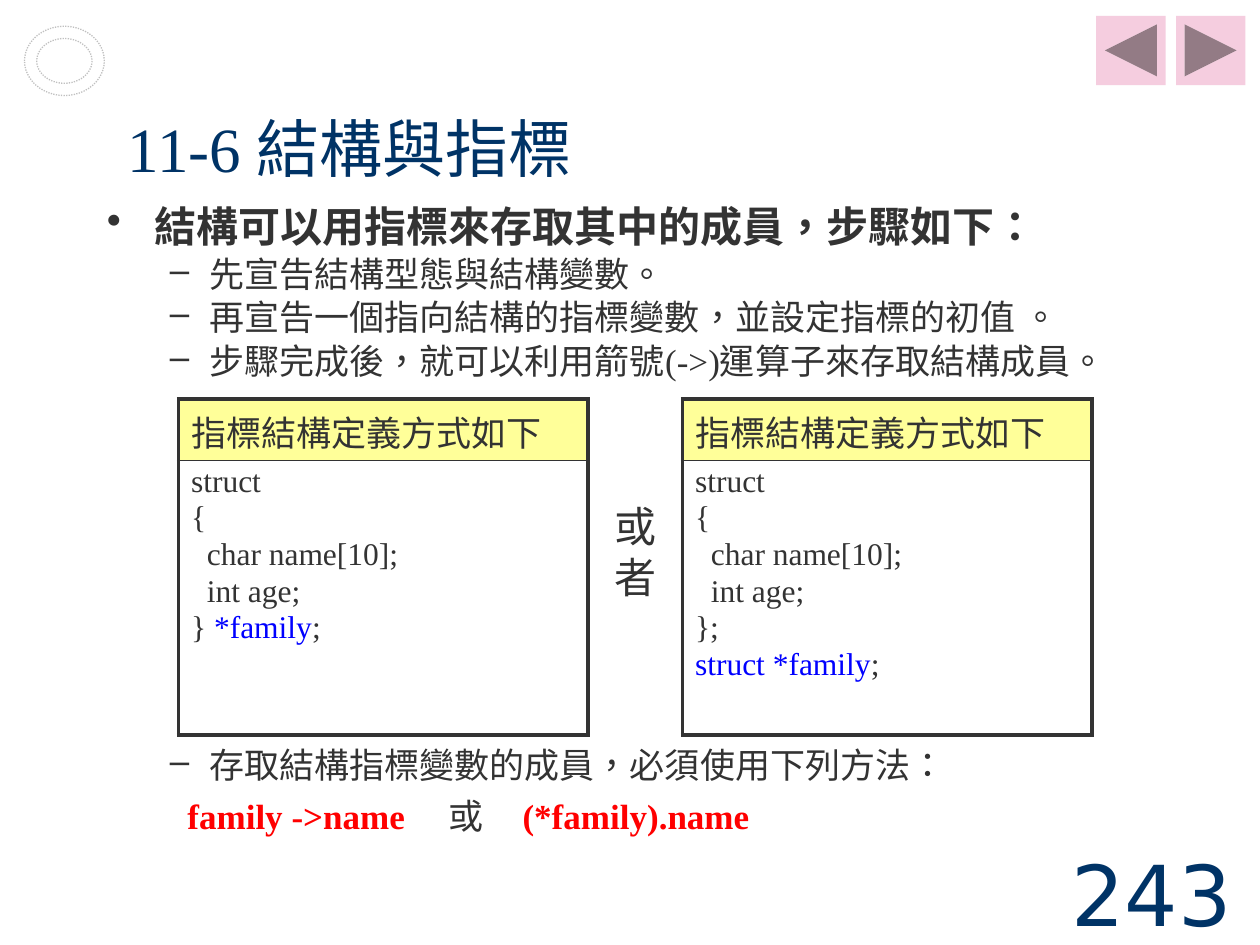
import pptx
import pptx.util
import pptx.dml.color
import pptx.enum.dml
import pptx.enum.lang
import pptx.enum.shapes
import pptx.enum.text
import pptx.oxml.ns
from lxml import etree

Pt = pptx.util.Pt
Shape = pptx.enum.shapes.MSO_SHAPE
Align = pptx.enum.text.PP_ALIGN
Anchor = pptx.enum.text.MSO_ANCHOR
NAVY, INK, RED, BLUE = "003366", "333333", "FF0000", "0000FF"
PINK, YELLOW, WHITE, GRAY = "F5CDDF", "FFFF99", "FFFFFF", "C0C0C0"


def rgb(code):
    return pptx.dml.color.RGBColor.from_string(code)


def node(parent, tag, **attrs):
    return etree.SubElement(parent, pptx.oxml.ns.qn(tag), attrs)


class Deck:
    font = "Times New Roman"

    def __init__(self, slide):
        self.slide = slide

    def para(self, frame, runs, size, first=False, align=None, space=0,
             lines=None, face=None):
        """Add a paragraph of (text, colour, bold) runs."""
        p = frame.paragraphs[0] if first else frame.add_paragraph()
        p.alignment = align
        p.space_before = Pt(space)
        if lines:
            p.line_spacing = lines
        for text, color, bold in runs:
            run = p.add_run()
            run.text = text
            run.font.name = face or self.font
            run.font.size = Pt(size)
            run.font.bold = bold
            run.font.color.rgb = rgb(color)
            run.font.language_id = pptx.enum.lang.MSO_LANGUAGE_ID.TRADITIONAL_CHINESE
        return p

    def box(self, left, top, width, height, anchor=Anchor.TOP, wrap=True):
        item = self.slide.shapes.add_textbox(Pt(left), Pt(top), Pt(width), Pt(height))
        frame = item.text_frame
        frame.word_wrap = wrap
        frame.vertical_anchor = anchor
        return frame

    def indent(self, p, left, hang=0, mark=None):
        """Set the indent and, if given, the bullet mark."""
        props = p._p.get_or_add_pPr()
        props.set("marL", str(Pt(left)))
        props.set("indent", str(Pt(-hang)))
        if mark:
            node(props, "a:buChar", char=mark)

    def list(self, frame, items):
        """Fill a frame with (level, text) bullet items."""
        for i, (level, text) in enumerate(items):
            size, left, hang, mark = ((24, 27, 27, "•"), (20, 58.5, 22.5, "–"))[level]
            p = self.para(frame, [(text, INK, level == 0)], size, i == 0,
                          space=size / 6, lines=0.9)
            p.level = level
            self.indent(p, left, hang, mark)

    def tabs(self, p, stops):
        tabs = node(p._p.get_or_add_pPr(), "a:tabLst")
        for stop in stops:
            node(tabs, "a:tab", pos=str(Pt(stop)), algn="l")

    def shape(self, kind, left, top, width, height, fill=None):
        item = self.slide.shapes.add_shape(kind, Pt(left), Pt(top), Pt(width), Pt(height))
        item.shadow.inherit = False
        if fill:
            item.fill.solid()
            item.fill.fore_color.rgb = rgb(fill)
            item.line.fill.background()
        else:
            item.fill.background()
        return item

    def ring(self, left, top, width, height, band):
        item = self.shape(Shape.DONUT, left, top, width, height)
        item.adjustments[0] = band / min(width, height)
        item.line.color.rgb = rgb(GRAY)
        item.line.width = Pt(0.75)
        item.line.dash_style = pptx.enum.dml.MSO_LINE.ROUND_DOT

    def cell(self, cell, fill, top, bottom):
        """Fill a cell and draw its borders."""
        props = cell._tc.get_or_add_tcPr()
        for side, width in (("L", 2.25), ("R", 2.25), ("T", top), ("B", bottom)):
            line = node(props, "a:ln" + side, w=str(Pt(width)))
            node(node(line, "a:solidFill"), "a:srgbClr", val=INK)
        cell.fill.solid()
        cell.fill.fore_color.rgb = rgb(fill)

    def code(self, left, title, rows):
        """Add a titled code table; rows are (indent, runs)."""
        table = self.slide.shapes.add_table(2, 1, Pt(left), Pt(228), Pt(234), Pt(192)).table
        table.first_row = table.horz_banding = False
        table.rows[0].height, table.rows[1].height = Pt(35.3), Pt(156.7)
        head, body = table.cell(0, 0), table.cell(1, 0)
        self.cell(head, YELLOW, 2.25, 1)
        self.cell(body, WHITE, 1, 2.25)
        self.para(head.text_frame, [(title, INK, False)], 20, True, space=4)
        for i, (left, runs) in enumerate(rows):
            p = self.para(body.text_frame, runs, 18, i == 0, Align.JUSTIFY, 3, 0.9)
            self.indent(p, left)


def main():
    prs = pptx.Presentation()
    prs.slide_width, prs.slide_height = Pt(720), Pt(540)
    deck = Deck(prs.slides.add_slide(prs.slide_layouts[6]))

    deck.shape(Shape.ACTION_BUTTON_FORWARD_OR_NEXT, 672, 9, 39.6, 39.6, PINK)
    deck.shape(Shape.ACTION_BUTTON_BACK_OR_PREVIOUS, 626.4, 9, 39.6, 39.6, PINK)
    deck.ring(14, 15, 45.6, 39.6, 7)

    number = deck.box(598, 492, 113, 36, Anchor.MIDDLE)
    deck.para(number, [("243", NAVY, False)], 48, True, Align.RIGHT, face="DejaVu Sans")
    title = deck.box(66, 48, 600, 72, Anchor.MIDDLE)
    deck.para(title, [("11-6 結構與指標", NAVY, False)], 36, True)

    deck.list(deck.box(54, 114, 612, 110), [
        (0, "結構可以用指標來存取其中的成員，步驟如下："),
        (1, "先宣告結構型態與結構變數。"),
        (1, "再宣告一個指向結構的指標變數，並設定指標的初值 。"),
        (1, "步驟完成後，就可以利用箭號(->)運算子來存取結構成員。"),
    ])
    deck.list(deck.box(54, 424, 612, 30), [(1, "存取結構指標變數的成員，必須使用下列方法：")])
    usage = deck.para(deck.box(100, 453, 500, 32), [
        ("family ->name\t", RED, True), ("或\t", INK, False), ("(*family).name", RED, True),
    ], 20, True, lines=0.9)
    deck.tabs(usage, (149, 191.5))

    head = "指標結構定義方式如下"
    fields = [(0, [("struct", INK, False)]), (0, [("{", INK, False)]),
              (9, [("char name[10];", INK, False)]), (9, [("int age;", INK, False)])]
    end = (";", INK, False)
    deck.code(102, head, fields + [(0, [("} ", INK, False), ("*family", BLUE, False), end])])
    deck.code(390, head, fields + [(0, [("};", INK, False)]),
                                   (0, [("struct *family", BLUE, False), end])])
    joint = deck.box(336, 294, 54, 42, Anchor.MIDDLE, False)
    deck.para(joint, [("或者", INK, False)], 24, True, Align.CENTER)

    prs.save("out.pptx")


if __name__ == "__main__":
    main()
